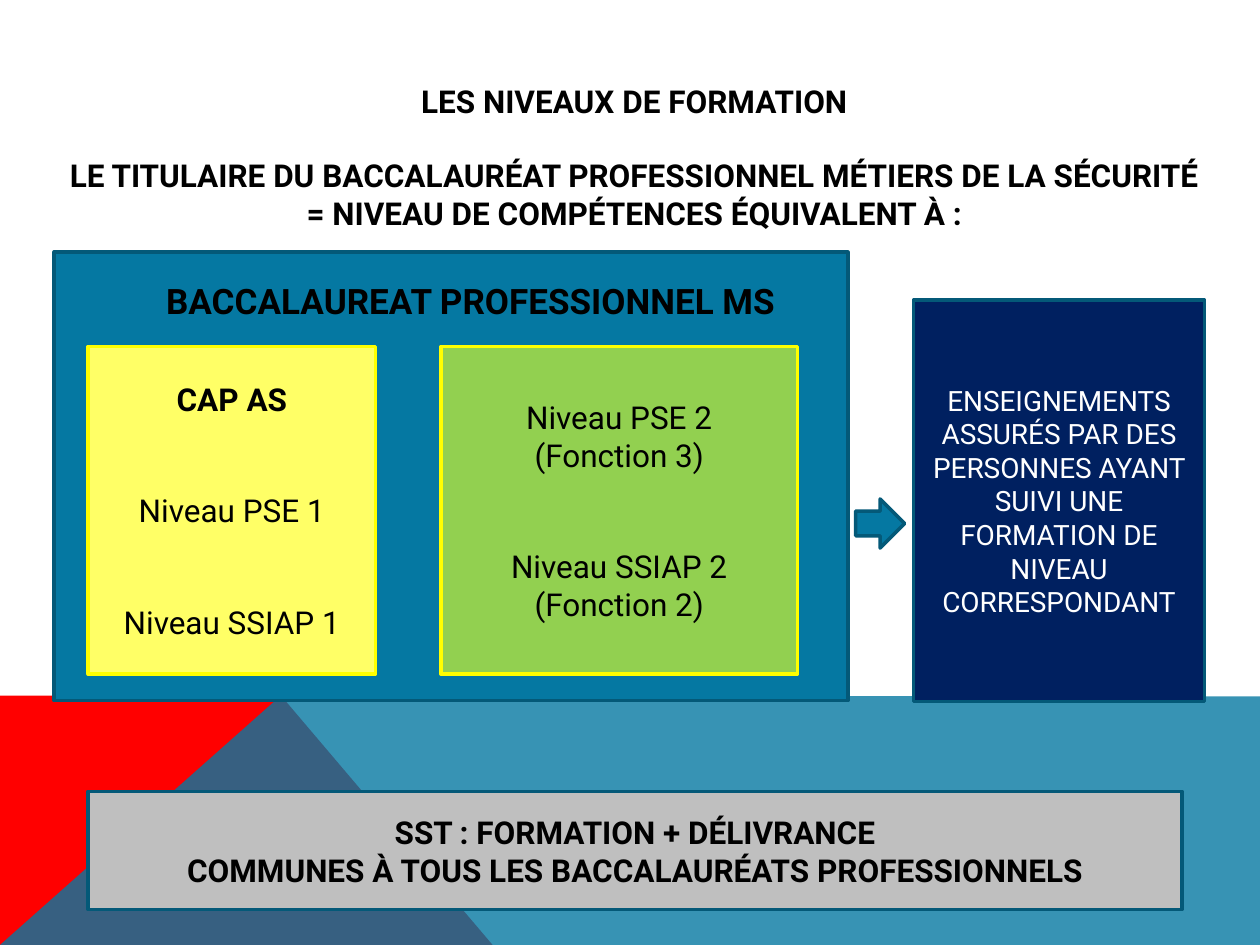
import pptx
import pptx.util
import pptx.dml.color
import pptx.enum.shapes
import pptx.enum.text
import pptx.oxml.ns
import lxml.etree

RGB = pptx.dml.color.RGBColor
KIND = pptx.enum.shapes.MSO_SHAPE
ANCHOR = pptx.enum.text.MSO_ANCHOR
CENTER = pptx.enum.text.PP_ALIGN.CENTER

BLACK = RGB(0x00, 0x00, 0x00)
WHITE = RGB(0xFF, 0xFF, 0xFF)
RED = RGB(0xFF, 0x00, 0x00)
TEAL = RGB(0x05, 0x78, 0xA2)
EDGE = RGB(0x04, 0x59, 0x78)
PALE = RGB(0xFF, 0xFF, 0x66)
YELLOW = RGB(0xFF, 0xFF, 0x00)
GREEN = RGB(0x92, 0xD0, 0x50)
GREY = RGB(0xBF, 0xBF, 0xBF)
NAVY = RGB(0x00, 0x20, 0x60)

FONT = "Roboto"
WIDE, HIGH = pptx.util.Inches(10), pptx.util.Inches(7.5)
MILLE = (WIDE / 1000, HIGH / 1000)

BANDS = [
    ([(0, 1000), (0, 736), (223, 736), (391, 1000)], RED, 100),
    ([(0, 1000), (223, 736), (1000, 737), (1000, 1000)], TEAL, 80),
]

TITLE = [
    ("LES NIVEAUX DE FORMATION", True, 0),
    ("LE TITULAIRE DU BACCALAURÉAT PROFESSIONNEL MÉTIERS DE LA SÉCURITÉ "
     "= NIVEAU DE COMPÉTENCES ÉQUIVALENT À :", True, 1),
]
HEAD = [("BACCALAUREAT PROFESSIONNEL MS", True, 0)]
CAP = [
    ("CAP AS", True, 0),
    ("Niveau PSE 1", False, 2),
    ("Niveau SSIAP 1", False, 2),
]
BAC = [
    ("Niveau PSE 2", False, 0),
    ("(Fonction 3)", False, 0),
    ("Niveau SSIAP 2 (Fonction 2)", False, 2),
]
SST = [
    ("SST : FORMATION + DÉLIVRANCE", True, 0),
    ("COMMUNES À TOUS LES BACCALAURÉATS PROFESSIONNELS", True, 0),
]
STAFF = [
    ("ENSEIGNEMENTS ASSURÉS PAR DES PERSONNES AYANT SUIVI UNE FORMATION "
     "DE NIVEAU CORRESPONDANT", False, 0),
]

TITLE_AT = (4.3, 8, 92.1, 18)
HEAD_AT = (4.3, 28.93, 66.1, 5.87)
ROW = (36.67, 34.67)
BOXES = [
    (KIND.RECTANGLE, (4.3, 26.67, 63, 47.47), TEAL, EDGE, [], 18, BLACK),
    (KIND.RECTANGLE, (7, ROW[0], 22.8, ROW[1]), PALE, YELLOW, CAP, 18, BLACK),
    (KIND.RECTANGLE, (35, ROW[0], 28.3, ROW[1]), GREEN, YELLOW, BAC, 18, BLACK),
    (KIND.RECTANGLE, (7, 83.73, 86.8, 12.53), GREY, EDGE, SST, 18, BLACK),
    (KIND.RECTANGLE, (72.5, 31.73, 23.1, 42.53), NAVY, EDGE, STAFF, 16, WHITE),
    (KIND.RIGHT_ARROW, (67.9, 52.8, 3.9, 5.2), TEAL, EDGE, [], 18, BLACK),
]


def place(at):
    """Turn percentages of the slide into lengths."""
    return [int(part * full / 100) for part, full in zip(at, (WIDE, HIGH) * 2)]


def write(frame, lines, size, color, anchor):
    """Fill a frame with centred lines of (text, bold, lines of gap above)."""
    frame.word_wrap = True
    frame.auto_size = pptx.enum.text.MSO_AUTO_SIZE.NONE
    frame.vertical_anchor = anchor
    frame.text = "\n".join(text for text, _, _ in lines)
    for para, (_, bold, gap) in zip(frame.paragraphs, lines):
        para.alignment = CENTER
        para.space_before = pptx.util.Pt(21 * gap)
        for run in para.runs:
            run.font.name = FONT
            run.font.size = pptx.util.Pt(size)
            run.font.bold = bold
            run.font.color.rgb = color


def paint(shape, fill):
    """Give a shape a plain fill without shadow."""
    shape.shadow.inherit = False
    shape.fill.solid()
    shape.fill.fore_color.rgb = fill


def add_band(slide, points, fill, share):
    """Draw one backdrop shape with the given opacity."""
    pen = slide.shapes.build_freeform(*points[0], scale=MILLE)
    pen.add_line_segments(points[1:], close=True)
    band = pen.convert_to_shape()
    paint(band, fill)
    band.line.fill.background()
    if share < 100:
        name = pptx.oxml.ns.qn
        tint = band.fill._xPr.find(name("a:solidFill")).find(name("a:srgbClr"))
        lxml.etree.SubElement(tint, name("a:alpha"), val=str(share * 1000))


def add_box(slide, kind, at, fill, edge, lines, size, color):
    """Draw one outlined shape with its text."""
    box = slide.shapes.add_shape(kind, *place(at))
    paint(box, fill)
    box.line.color.rgb = edge
    box.line.width = pptx.util.Pt(2)
    if lines:
        write(box.text_frame, lines, size, color, ANCHOR.MIDDLE)


def main():
    """Build the slide on training levels."""
    deck = pptx.Presentation()
    deck.slide_width, deck.slide_height = WIDE, HIGH
    slide = deck.slides.add_slide(deck.slide_layouts[5])
    for band in BANDS:
        add_band(slide, *band)
    title = slide.shapes.title
    title.left, title.top, title.width, title.height = place(TITLE_AT)
    write(title.text_frame, TITLE, 18, BLACK, ANCHOR.TOP)
    for box in BOXES:
        add_box(slide, *box)
    head = slide.shapes.add_textbox(*place(HEAD_AT))
    write(head.text_frame, HEAD, 20, BLACK, ANCHOR.TOP)
    deck.save("out.pptx")


if __name__ == "__main__":
    main()
